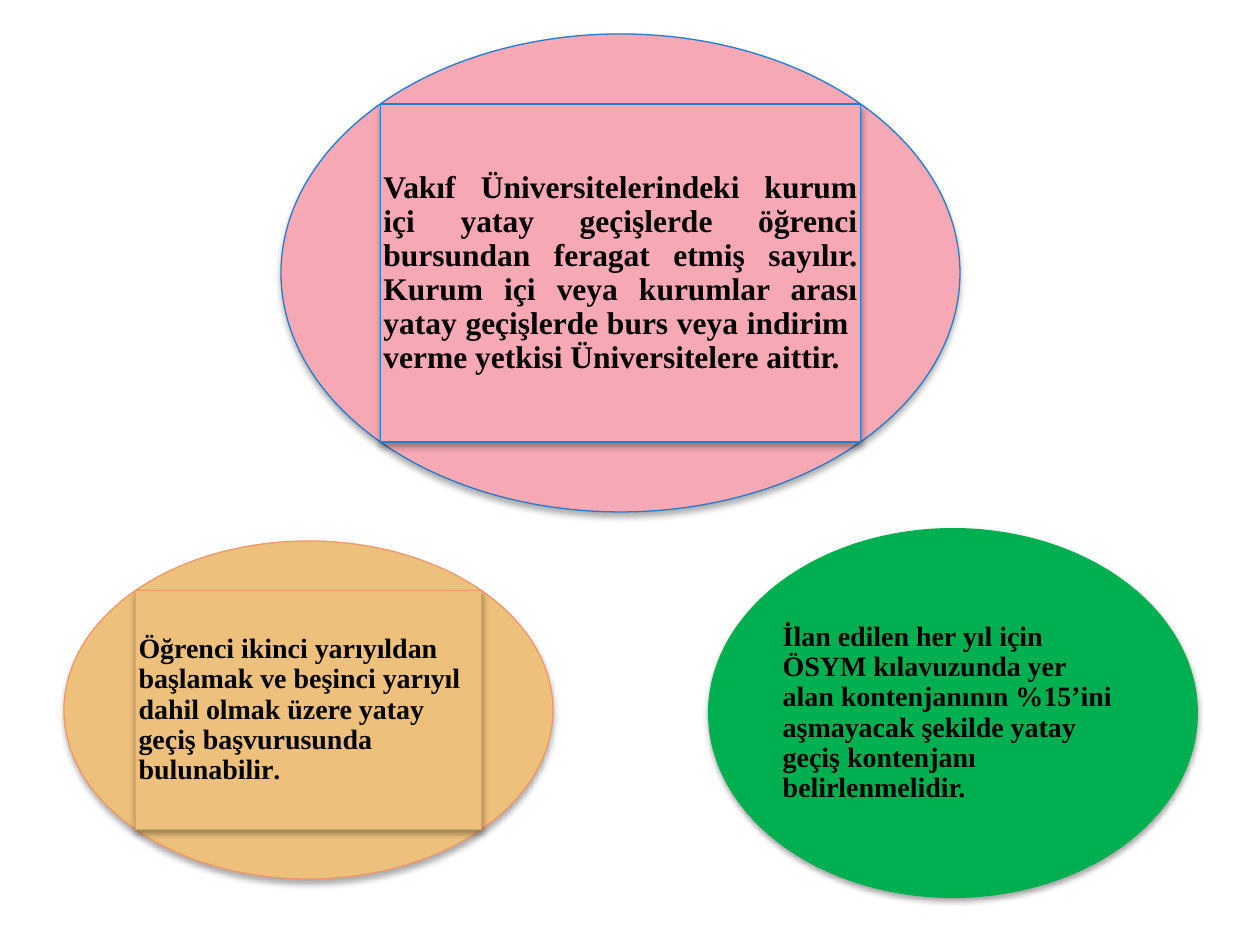
import math
from dataclasses import dataclass
from typing import Optional

import pptx
import pptx.dml.color
import pptx.enum.shapes
import pptx.enum.text
import pptx.oxml
import pptx.oxml.ns
import pptx.util
from lxml import etree

RGBColor = pptx.dml.color.RGBColor
Shapes = pptx.enum.shapes.MSO_SHAPE
Align = pptx.enum.text.PP_ALIGN
qn = pptx.oxml.ns.qn

PX = 914400 / 126
TEXT_INSET = 3
BLACK = RGBColor(0x00, 0x00, 0x00)
PINK = RGBColor(0xF6, 0xA8, 0xB5)
BLUE = RGBColor(0x23, 0x7C, 0xCE)
SAND = RGBColor(0xED, 0xC1, 0x7C)
ORANGE = RGBColor(0xF0, 0x98, 0x69)
GREEN = RGBColor(0x00, 0xB0, 0x50)


@dataclass(frozen=True)
class Shadow:
    blur_pt: float
    distance_pt: float
    opacity: int


@dataclass(frozen=True)
class Rule:
    left: int
    top: int
    width: int
    height: int
    fill: RGBColor
    outline: Optional[RGBColor]
    oval_shadow: Shadow
    panel_shadow: Optional[Shadow]
    runs: tuple[tuple[str, int], ...]
    align: Align = Align.LEFT


SOFT = Shadow(3.5, 2.2, 32)
TIGHT = Shadow(3.1, 1.8, 35)

RULES = (
    Rule(281, 34, 679, 478, PINK, BLUE, SOFT, SOFT,
         (("Vakıf Üniversitelerindeki kurum içi yatay geçişlerde öğrenci "
           "bursundan feragat etmiş sayılır. Kurum içi veya kurumlar arası "
           "yatay geçişlerde burs veya indirim  verme yetkisi "
           "Üniversitelere aittir.", 18),), Align.JUSTIFY),
    Rule(64, 541, 489, 338, SAND, ORANGE, SOFT, SOFT,
         (("Öğrenci ikinci yarıyıldan başlamak ve beşinci yarıyıl dahil "
           "olmak üzere yatay geçiş başvurusunda bulunabilir", 16),
          (".", 15))),
    Rule(708, 528, 490, 370, GREEN, None, TIGHT, None,
         (("İlan edilen her yıl için ÖSYM kılavuzunda yer alan "
           "kontenjanının %15’ini aşmayacak şekilde yatay geçiş kontenjanı "
           "belirlenmelidir.", 16),)),
)


def px(length: float) -> int:
    return round(length * PX)


def add_shadow(shape, shadow: Shadow) -> None:
    effects = shape._element.spPr.find(qn("a:effectLst"))
    outer = etree.SubElement(
        effects, qn("a:outerShdw"),
        blurRad=str(pptx.util.Pt(shadow.blur_pt)),
        dist=str(pptx.util.Pt(shadow.distance_pt)),
        dir="5400000", rotWithShape="0")
    color = etree.SubElement(outer, qn("a:srgbClr"), val=str(BLACK))
    etree.SubElement(color, qn("a:alpha"), val=str(shadow.opacity * 1000))


def add_part(group, kind: Shapes, box: tuple[float, ...], rule: Rule,
             shadow: Optional[Shadow]):
    part = group.shapes.add_shape(kind, *map(px, box))
    part.fill.solid()
    part.fill.fore_color.rgb = rule.fill
    if rule.outline is None:
        part.line.fill.background()
    else:
        part.line.color.rgb = rule.outline
        part.line.width = pptx.util.Pt(0.75)
    part.shadow.inherit = False
    if shadow:
        add_shadow(part, shadow)
    return part


def write_text(panel, rule: Rule) -> None:
    frame = panel.text_frame
    frame.word_wrap = True
    frame.vertical_anchor = pptx.enum.text.MSO_ANCHOR.MIDDLE
    frame.margin_left = frame.margin_right = px(TEXT_INSET)
    frame.margin_top = frame.margin_bottom = px(TEXT_INSET)
    paragraph = frame.paragraphs[0]
    paragraph.alignment = rule.align
    paragraph.line_spacing = 0.9
    # Space after, as a share of the text size
    after = etree.SubElement(paragraph._p.get_or_add_pPr(), qn("a:spcAft"))
    etree.SubElement(after, qn("a:spcPct"), val="35000")
    for text, size in rule.runs:
        run = paragraph.add_run()
        run.text = text
        run.font.name = "Times New Roman"
        run.font.size = pptx.util.Pt(size)
        run.font.bold = True
        run.font.color.rgb = BLACK


def add_rule(slide, rule: Rule) -> None:
    group = slide.shapes.add_group_shape()
    oval_box = (rule.left, rule.top, rule.width, rule.height)
    add_part(group, Shapes.OVAL, oval_box, rule, rule.oval_shadow)
    # The text panel is the rectangle inscribed in the oval
    ratio = math.sqrt(0.5)
    margin = (1 - ratio) / 2
    panel_box = (rule.left + rule.width * margin,
                 rule.top + rule.height * margin,
                 rule.width * ratio, rule.height * ratio)
    panel = add_part(group, Shapes.RECTANGLE, panel_box, rule,
                     rule.panel_shadow)
    write_text(panel, rule)


def main() -> None:
    deck = pptx.Presentation()
    deck.slide_width = px(1260)
    deck.slide_height = px(945)
    slide = deck.slides.add_slide(deck.slide_layouts[6])
    for rule in RULES:
        add_rule(slide, rule)
    deck.save("out.pptx")


if __name__ == "__main__":
    main()
